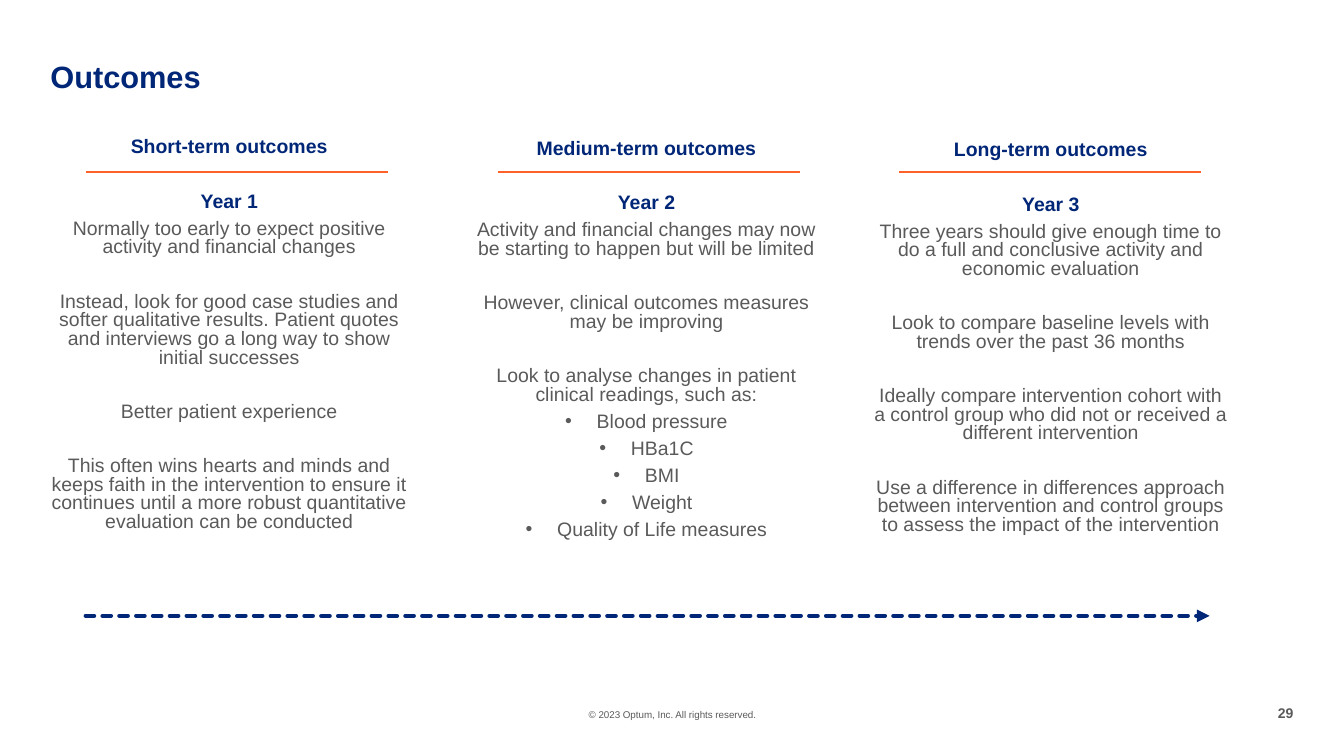
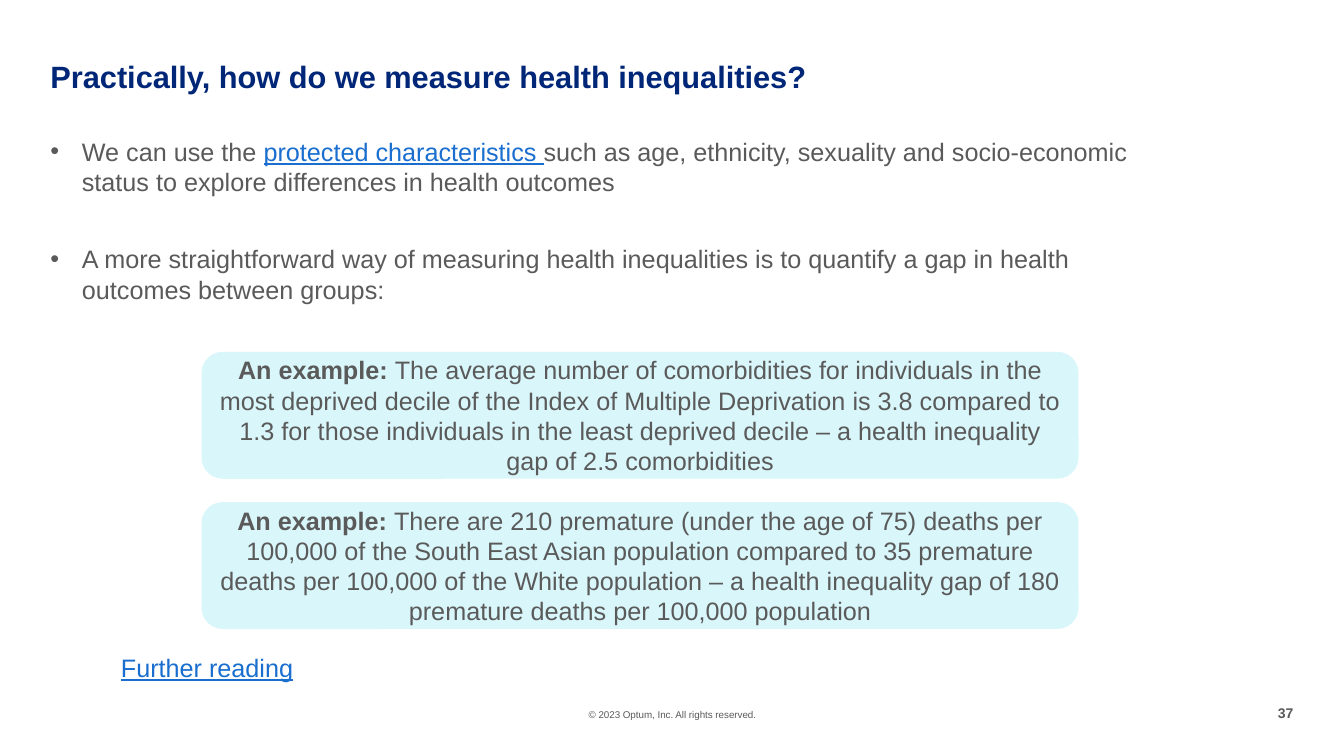
from dataclasses import dataclass

from lxml import etree
from pptx import Presentation
from pptx.dml.color import RGBColor
from pptx.enum.dml import MSO_LINE
from pptx.enum.shapes import MSO_CONNECTOR, MSO_SHAPE
from pptx.enum.text import MSO_ANCHOR, MSO_AUTO_SIZE, PP_ALIGN
from pptx.oxml.ns import qn
from pptx.util import Pt

NAVY = RGBColor(0x00, 0x26, 0x77)
GREY = RGBColor(0x5A, 0x5A, 0x5A)
ORANGE = RGBColor(0xFF, 0x61, 0x2B)
BLUE = RGBColor(0x19, 0x6E, 0xCF)
PALE_CYAN = RGBColor(0xD9, 0xF6, 0xFA)

LEFT, CENTER, RIGHT = PP_ALIGN.LEFT, PP_ALIGN.CENTER, PP_ALIGN.RIGHT
TOP, MIDDLE = MSO_ANCHOR.TOP, MSO_ANCHOR.MIDDLE
NO_AUTOFIT = MSO_AUTO_SIZE.NONE
STRAIGHT = MSO_CONNECTOR.STRAIGHT
ROUNDED = MSO_SHAPE.ROUNDED_RECTANGLE
SHORT_DASH = MSO_LINE.SQUARE_DOT

FONT = "Arial"
SPACE = 6
HANG = 22.5
COLUMN_SIZE, COLUMN_PITCH = 13.9, 13.35
TEXT_SIZE, TEXT_PITCH = 18, 21.6
COLUMN_GAP = COLUMN_PITCH + 2 * SPACE
TEXT_GAP = TEXT_PITCH + 2 * SPACE


@dataclass(frozen=True)
class Span:
    """A stretch of text in one format."""
    text: str
    color: RGBColor = GREY
    bold: bool = False
    underline: bool = False


@dataclass(frozen=True)
class Para:
    """A paragraph with its gap above and its bullet."""
    spans: tuple[Span, ...]
    before: float = SPACE
    bullet: bool = False


@dataclass(frozen=True)
class Column:
    """One stage of outcomes, with the rule under its heading."""
    left: float
    top: float
    rule_left: float
    heading: str
    year: str
    points: tuple[str, ...]
    bullets: tuple[str, ...] = ()


COLUMNS = (
    Column(36, 99.4, 61.2, "Short-term outcomes", "Year 1", (
        "Normally too early to expect positive activity and financial changes",
        "Instead, look for good case studies and softer qualitative results. Patient quotes "
        "and interviews go a long way to show initial successes",
        "Better patient experience",
        "This often wins hearts and minds and keeps faith in the intervention to ensure it "
        "continues until a more robust quantitative evaluation can be conducted",
    )),
    Column(334, 100.4, 355.7, "Medium-term outcomes", "Year 2", (
        "Activity and financial changes may now be starting to happen but will be limited",
        "However, clinical outcomes measures may be improving",
        "Look to analyse changes in patient clinical readings, such as:",
    ), ("Blood pressure", "HBa1C", "BMI", "Weight", "Quality of Life measures")),
    Column(622.8, 101.5, 642.2, "Long-term outcomes", "Year 3", (
        "Three years should give enough time to do a full and conclusive activity and "
        "economic evaluation",
        "Look to compare baseline levels with trends over the past 36 months",
        "Ideally compare intervention cohort with a control group who did not or received a "
        "different intervention",
        "Use a difference in differences approach between intervention and control groups to "
        "assess the impact of the intervention",
    )),
)

MEASURES = (
    Para((
        Span("We can use the "),
        Span("protected characteristics ", BLUE, underline=True),
        Span("such as age, ethnicity, sexuality and socio-economic status to explore "
             "differences in health outcomes"),
    ), bullet=True),
    Para((Span("A more straightforward way of measuring health inequalities is to quantify a "
               "gap in health outcomes between groups:"),), TEXT_GAP, True),
)

EXAMPLES = (
    "The average number of comorbidities for individuals in the most deprived decile of the "
    "Index of Multiple Deprivation is 3.8 compared to 1.3 for those individuals in the least "
    "deprived decile – a health inequality gap of 2.5 comorbidities",
    "There are 210 premature (under the age of 75) deaths per 100,000 of the South East Asian "
    "population compared to 35 premature deaths per 100,000 of the White population – a health "
    "inequality gap of 180 premature deaths per 100,000 population",
)


def place(box, left: float, top: float, width: float, height: float) -> None:
    """Move and size a placeholder."""
    box.left, box.top, box.width, box.height = map(Pt, (left, top, width, height))


def set_bullet(para, bullet: bool) -> None:
    """Give a paragraph a hanging bullet, or none."""
    properties = para._p.get_or_add_pPr()
    properties.set("marL", str(Pt(HANG) if bullet else 0))
    properties.set("indent", str(-Pt(HANG) if bullet else 0))
    if bullet:
        etree.SubElement(properties, qn("a:buFont")).set("typeface", FONT)
        etree.SubElement(properties, qn("a:buChar")).set("char", "•")
    else:
        etree.SubElement(properties, qn("a:buNone"))


def write(box, paras: tuple[Para, ...], *, size: float, pitch: float, align=LEFT,
          anchor=TOP, inset: tuple[float, float] = (0, 0)) -> None:
    """Fill a box with formatted paragraphs."""
    frame = box.text_frame
    frame.word_wrap = True
    frame.auto_size = NO_AUTOFIT
    frame.vertical_anchor = anchor
    frame.margin_left = frame.margin_right = Pt(inset[0])
    frame.margin_top = frame.margin_bottom = Pt(inset[1])
    for index, item in enumerate(paras):
        para = frame.add_paragraph() if index else frame.paragraphs[0]
        set_bullet(para, item.bullet)
        para.alignment = align
        para.line_spacing = Pt(pitch)
        para.space_before = Pt(item.before if index else 0)
        para.space_after = Pt(0)
        for span in item.spans:
            run = para.add_run()
            run.text = span.text
            font = run.font
            font.name, font.size = FONT, Pt(size)
            font.bold, font.underline = span.bold, span.underline
            font.color.rgb = span.color


def add_text(page, span: Span, left: float, top: float, width: float, height: float,
             **style) -> None:
    """Add a text box holding one span."""
    box = page.shapes.add_textbox(Pt(left), Pt(top), Pt(width), Pt(height))
    write(box, (Para((span,)),), **style)


def add_line(page, left: float, right: float, top: float, color: RGBColor, width: float):
    """Draw a level line and return it."""
    line = page.shapes.add_connector(STRAIGHT, Pt(left), Pt(top), Pt(right), Pt(top))
    line.line.color.rgb = color
    line.line.width = Pt(width)
    etree.SubElement(line._element.spPr, qn("a:effectLst"))
    return line


def add_page(deck, title: str, number: int):
    """Add a slide with its title, footer and number."""
    page = deck.slides.add_slide(deck.slide_layouts[1])
    place(page.shapes.title, 36, 43.9, 756, 23.8)
    write(page.shapes.title, (Para((Span(title, NAVY, True),)),), size=22, pitch=23.8)
    add_text(page, Span("© 2023 Optum, Inc. All rights reserved."), 370, 506.2, 220.5, 8.6,
             size=7, pitch=8.4, align=CENTER)
    add_text(page, Span(str(number), bold=True), 882, 503.3, 41.8, 12.2,
             size=10, pitch=12, align=RIGHT)
    return page


def column_paras(column: Column) -> tuple[Para, ...]:
    """Lay out the heading, year, points and bullets of a column."""
    heads = (Para((Span(column.heading, NAVY, True),)),
             Para((Span(column.year, NAVY, True),), COLUMN_GAP))
    points = tuple(Para((Span(text),), COLUMN_GAP if index else SPACE)
                   for index, text in enumerate(column.points))
    bullets = tuple(Para((Span(text),), bullet=True) for text in column.bullets)
    return heads + points + bullets


def build_outcomes(deck) -> None:
    """Build the slide of outcomes by year."""
    page = add_page(deck, "Outcomes", 29)
    width, height = 255.6, 309.6
    for index, column in enumerate(COLUMNS):
        if index:
            box = page.shapes.add_textbox(0, 0, 0, 0)
        else:
            box = page.placeholders[1]
        place(box, column.left, column.top, width, height)
        write(box, column_paras(column), size=COLUMN_SIZE, pitch=COLUMN_PITCH, align=CENTER)
        add_line(page, column.rule_left, column.rule_left + 216, 123.1, ORANGE, 1.5)
    arrow = add_line(page, 61.2, 864, 439.9, NAVY, 3)
    arrow.line.dash_style = SHORT_DASH
    outline = arrow.line._get_or_add_ln()
    outline.set("cap", "rnd")
    etree.SubElement(outline, qn("a:tailEnd")).set("type", "triangle")


def build_measures(deck) -> None:
    """Build the slide on measuring health inequalities."""
    page = add_page(deck, "Practically, how do we measure health inequalities?", 37)
    body = page.placeholders[1]
    place(body, 36, 97.2, 804.2, 190)
    write(body, MEASURES, size=TEXT_SIZE, pitch=TEXT_PITCH)
    for index, text in enumerate(EXAMPLES):
        card = page.shapes.add_shape(ROUNDED, Pt(144), Pt(251.3 + 107.3 * index),
                                     Pt(626.4), Pt(90.7))
        card.shadow.inherit = False
        card.fill.solid()
        card.fill.fore_color.rgb = PALE_CYAN
        card.line.fill.background()
        write(card, (Para((Span("An example: ", bold=True), Span(text))),), size=TEXT_SIZE,
              pitch=TEXT_PITCH, align=CENTER, anchor=MIDDLE, inset=(7.2, 3.6))
    add_text(page, Span("Further reading", BLUE, underline=True), 86.4, 465.8, 133.2, 21.6,
             size=TEXT_SIZE, pitch=TEXT_PITCH)


def main() -> None:
    """Build and save the deck."""
    deck = Presentation()
    deck.slide_width, deck.slide_height = Pt(960), Pt(540)
    build_outcomes(deck)
    build_measures(deck)
    deck.save("out.pptx")


if __name__ == "__main__":
    main()
